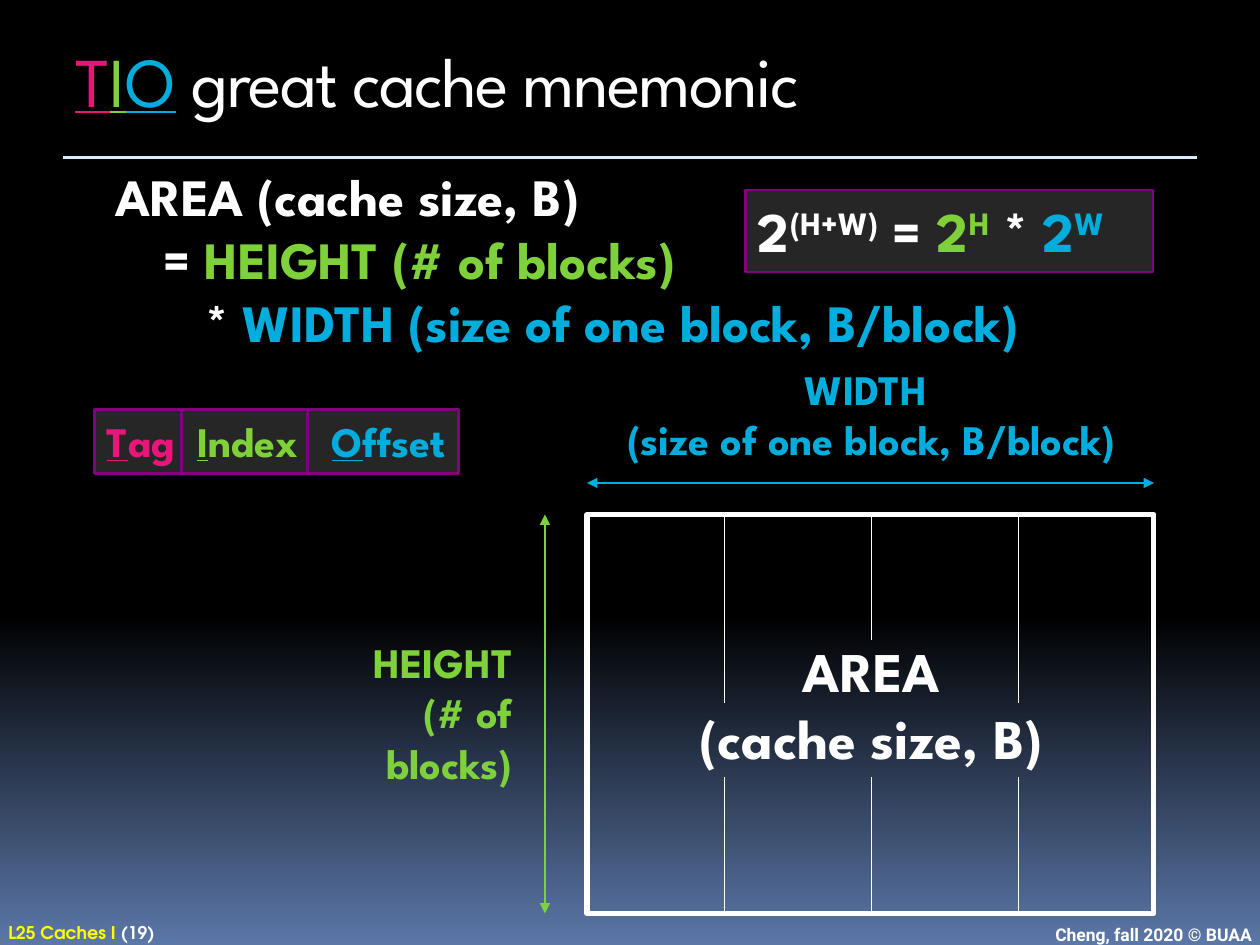
import dataclasses

import lxml.etree
import pptx
import pptx.dml.color
import pptx.enum.shapes
import pptx.enum.text
import pptx.oxml.ns
import pptx.util

SCALE = 7620
LEFT = pptx.enum.text.PP_ALIGN.LEFT
MID = pptx.enum.text.PP_ALIGN.CENTER
RIGHT = pptx.enum.text.PP_ALIGN.RIGHT


@dataclasses.dataclass(frozen=True)
class Theme:
    """Colours, fonts and type sizes of the slide."""
    white: str = "FFFFFF"
    black: str = "000000"
    dusk: str = "5B77A8"
    rule: str = "D6ECFF"
    yellow: str = "FFFF00"
    pink: str = "EA157A"
    green: str = "7FD13B"
    blue: str = "00ADDC"
    panel: str = "262626"
    purple: str = "800080"
    face: str = "League Spartan"
    note: str = "TeX Gyre Adventor"
    credit: str = "Roboto"
    title: int = 40
    large: int = 32
    body: int = 30
    label: int = 24
    small: int = 10


THEME = Theme()


def px(count):
    """Turn px into EMU."""
    return pptx.util.Emu(count * SCALE)


def tint(code):
    """Turn a hex code into a colour."""
    return pptx.dml.color.RGBColor.from_string(code)


def child(parent, tag, **attrs):
    """Append a drawing element with its attributes."""
    return lxml.etree.SubElement(parent, pptx.oxml.ns.qn(tag), attrs)


def write(para, runs, size, face=THEME.face, bold=True):
    """Add runs of (text, colour, extras) to a paragraph."""
    for text, color, *extras in runs:
        run = para.add_run()
        run.text = text
        font = run.font
        font.name, font.size, font.bold = face, pptx.util.Pt(size), bold
        font.color.rgb = tint(color)
        for extra in extras:
            for key, value in extra.items():
                font._element.set(key, value)


def frame(shape, pad=(12, 6, 12, 6)):
    """Set up the text frame of a shape and return it."""
    text = shape.text_frame
    text.word_wrap = True
    text.vertical_anchor = pptx.enum.text.MSO_ANCHOR.TOP
    (text.margin_left, text.margin_top,
     text.margin_right, text.margin_bottom) = map(px, pad)
    return text


def label(slide, box, lines, size, align=LEFT, pad=(12, 6, 12, 6), **style):
    """Add a text box with one paragraph for each list of runs."""
    text = frame(slide.shapes.add_textbox(*map(px, box)), pad)
    for spot, runs in enumerate(lines):
        para = text.add_paragraph() if spot else text.paragraphs[0]
        para.alignment = align
        write(para, runs, size, **style)
    return text


def line(slide, start, end, color, width=1, arrows=False):
    """Draw a straight line, with arrowheads at both ends if asked."""
    kind = pptx.enum.shapes.MSO_CONNECTOR.STRAIGHT
    stroke = slide.shapes.add_connector(kind, *map(px, start + end))
    stroke.line.color.rgb = tint(color)
    stroke.line.width = pptx.util.Pt(width)
    if arrows:
        for tag in ("a:headEnd", "a:tailEnd"):
            child(stroke.line._get_or_add_ln(), tag, type="triangle")
    child(stroke._element.spPr, "a:effectLst")


def panel(slide, box, color, width, fill=None):
    """Draw a framed box, filled if a colour is given."""
    kind = pptx.enum.shapes.MSO_SHAPE.RECTANGLE
    shape = slide.shapes.add_shape(kind, *map(px, box))
    shape.shadow.inherit = False
    if fill:
        shape.fill.solid()
        shape.fill.fore_color.rgb = tint(fill)
    else:
        shape.fill.background()
    shape.line.color.rgb = tint(color)
    shape.line.width = pptx.util.Pt(width)
    return shape


def backdrop(slide):
    """Fade the slide from black to dusk blue."""
    fill = slide.background.fill
    fill.gradient()
    fill.gradient_angle = 270
    stops = zip(fill.gradient_stops, ((0.65, THEME.black), (1, THEME.dusk)))
    for stop, (place, color) in stops:
        stop.position = place
        stop.color.rgb = tint(color)


def header(slide, box):
    """Place the title and the rule under it."""
    left, top, width, height = box
    under = {"u": "sng", "spc": "-100"}
    runs = [("T", THEME.pink, under), ("I", THEME.green, under),
            ("O", THEME.blue, under),
            (" great cache mnemonic", THEME.white, {"spc": "-100"})]
    label(slide, box, [runs], THEME.title, bold=False)
    base = top + height
    line(slide, (left, base), (left + width, base), THEME.rule, 1.5)


def footer(slide, box):
    """Place the lecture name and the credit along the bottom."""
    left, top, width, height = box
    pad = (8, 4, 8, 4)
    label(slide, (left, top, 650, height),
          [[("L25 Caches I ", THEME.yellow), ("(19)", THEME.white)]],
          THEME.small, pad=pad, face=THEME.note)
    label(slide, (left + width - 293, top + 2, 293, height),
          [[("Cheng, fall 2020 © BUAA", THEME.white)]],
          THEME.small, RIGHT, pad, face=THEME.credit)


def formula(slide, box):
    """Place the area formula as three stepped lines."""
    lines = [[("AREA (cache size, B)", THEME.white)],
             [("= ", THEME.white), ("HEIGHT (# of blocks)", THEME.green)],
             [("* ", THEME.white),
              ("WIDTH (size of one block, B/block)", THEME.blue)]]
    text = label(slide, box, lines, THEME.body)
    for para, inset in zip(text.paragraphs, (8, 54, 95)):
        para._p.get_or_add_pPr().set("marL", str(px(inset)))


def powers(slide, box):
    """Place the panel with the powers of two."""
    high = {"baseline": "30000"}
    para = frame(panel(slide, box, THEME.purple, 1.5,
                       THEME.panel)).paragraphs[0]
    para.alignment = LEFT
    write(para, [("2", THEME.white), ("(H+W)", THEME.white, high),
                 (" = ", THEME.white), ("2", THEME.green),
                 ("H", THEME.green, high), (" * ", THEME.white),
                 ("2", THEME.blue), ("W", THEME.blue, high)], THEME.large)


def fields(slide, box):
    """Place the address panel with its tag, index and offset."""
    left, top, width, height = box
    shape = panel(slide, box, THEME.purple, 1.5, THEME.panel)
    para = frame(shape, (12, 6, 0, 6)).paragraphs[0]
    para.alignment = LEFT
    stops = child(para._p.get_or_add_pPr(), "a:tabLst")
    for stop in (86, 214):
        child(stops, "a:tab", pos=str(px(stop)), algn="l")
    for first, rest, color in (("T", "ag\t", THEME.pink),
                               ("I", "ndex\t", THEME.green),
                               ("O", "ffset", THEME.blue)):
        write(para, [(first, color, {"u": "sng"}), (rest, color)],
              THEME.label)
    for split in (83, 203):
        line(slide, (left + split, top), (left + split, top + height),
             THEME.purple, 1.5)


def cache(slide, box):
    """Draw the cache as an area with its width and height."""
    left, top, width, height = box
    base = top + height
    panel(slide, box, THEME.white, 3)
    line(slide, (left, top - 30), (left + width, top - 30),
         THEME.blue, arrows=True)
    line(slide, (left - 40, top), (left - 40, base),
         THEME.green, arrows=True)
    for column, depth in enumerate((180, 120, 180)):
        x = left + 131 + 140 * column
        line(slide, (x, top), (x, top + depth), THEME.white)
        line(slide, (x, base - 130), (x, base), THEME.white)
    label(slide, (left + 1, top - 150, width, 109),
          [[("WIDTH ", THEME.blue)],
           [("(size of one block, B/block)", THEME.blue)]],
          THEME.label, MID)
    label(slide, (left - 295, top + 110, 236, 160),
          [[("HEIGHT", THEME.green)], [("(# of blocks)", THEME.green)]],
          THEME.label, RIGHT)
    label(slide, (left + 81, top + 110, 380, 142),
          [[("AREA", THEME.white)], [("(cache size, B)", THEME.white)]],
          THEME.large, MID)


def main():
    """Build the slide and save it."""
    deck = pptx.Presentation()
    deck.slide_width, deck.slide_height = px(1200), px(900)
    slide = deck.slides.add_slide(deck.slide_layouts[6])
    backdrop(slide)
    footer(slide, (0, 874, 1200, 26))
    header(slide, (60, 30, 1080, 120))
    formula(slide, (90, 150, 1030, 150))
    cache(slide, (559, 490, 540, 380))
    powers(slide, (710, 181, 388, 78))
    fields(slide, (90, 390, 347, 61))
    deck.save("out.pptx")


if __name__ == "__main__":
    main()
